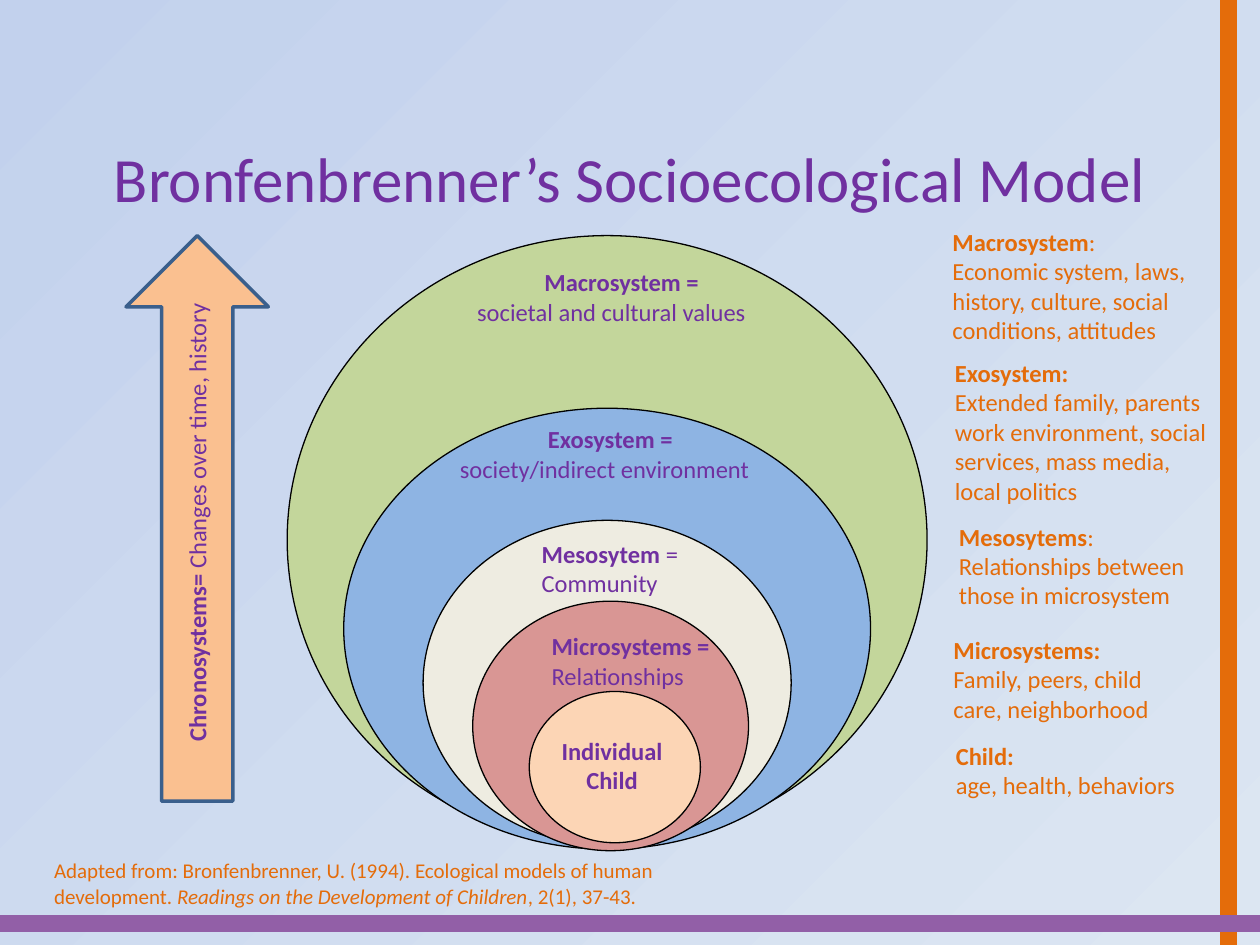
from pptx import Presentation
from pptx.dml.color import RGBColor
from pptx.enum.shapes import MSO_CONNECTOR, MSO_SHAPE
from pptx.enum.text import MSO_ANCHOR, PP_ALIGN
from pptx.oxml.ns import qn
from pptx.util import Cm, Pt

COLORS = {
    "purple": "7030A0", "orange": "E46C0A", "band": "925FA7", "black": "000000",
    "green": "C3D69B", "blue": "8EB4E3", "cream": "EEECE1", "rose": "D99694",
    "peach": "FCD5B5", "arrow": "FAC090", "arrow edge": "3A5F8C",
    "sky": "C2D1ED", "pale": "DCE6F2",
}
FONT = "Calibri"
WIDTH, HEIGHT = 25.4, 19.05
LEFT, CENTER = PP_ALIGN.LEFT, PP_ALIGN.CENTER

# All boxes are left, top, width, height in centimetres.
TITLE = ("Bronfenbrenner’s Socioecological Model", (1.8, 1.98, 21.79, 3.2))
BANDS = [  # start, end, colour
    ((24.77, HEIGHT), (24.77, 0), "orange"),
    ((0, 18.62), (WIDTH, 18.62), "band"),
]
SYSTEMS = [  # outermost first
    ("green", (5.79, 4.75, 12.9, 12.27)),
    ("blue", (6.93, 8.23, 10.62, 8.89)),
    ("cream", (8.53, 10.49, 7.42, 6.55)),
    ("rose", (9.53, 12.12, 5.56, 5.03)),
    ("peach", (10.67, 13.94, 3.45, 3.05)),
]
TIME_ARROW = (2.54, 4.75, 2.87, 11.4)

# Each paragraph is (alignment, bold part, regular part).
SYSTEM_LABELS = [
    ((9.37, 5.26, 6.32, 1.45),
     [(CENTER, "Macrosystem =", ""), (LEFT, "", "societal and cultural values")]),
    ((9.02, 8.43, 6.68, 1.45),
     [(CENTER, "Exosystem = ", ""), (LEFT, "", "society/indirect environment")]),
    ((10.67, 10.74, 4.65, 1.45),
     [(LEFT, "Mesosytem ", "="), (LEFT, "", "Community")]),
    ((10.87, 12.6, 4.04, 1.45), [(LEFT, "Microsystems = ", "Relationships")]),
    ((10.97, 14.71, 2.74, 1.45), [(CENTER, "Individual Child", "")]),
]
TIME_LABEL = ((-1.02, 9.78, 9.98, 0.86),
              [(LEFT, "Chronosystems= ", "Changes over time, history")])
EXAMPLES = [  # box, bold heading, regular rest of heading, examples
    ((18.95, 4.45, 5.23, 2.64), "Macrosystem", ":",
     "Economic system, laws, history, culture, social conditions, attitudes"),
    ((19, 7.09, 5.82, 3.25), "Exosystem:", "",
     "Extended family, parents work environment, social services, mass media, local politics"),
    ((19.08, 10.39, 5.13, 2.06), "Mesosytems", ":",
     "Relationships between those in microsystem"),
    ((18.97, 12.67, 5.13, 2.06), "Microsystems:", "",
     "Family, peers, child care, neighborhood"),
    ((19.02, 14.81, 5.51, 1.45), "Child:", "", "age, health, behaviors"),
]
CITATION_BOX = (0.84, 17.17, 16.33, 1.8)
CITATION = [  # text, italic
    ("Adapted from: Bronfenbrenner, U. (1994). Ecological models of human development.\u00a0", False),
    ("Readings on the Development of Children", True),
    (", 2(1), 37-43.", False),
]


def rgb(name):
    return RGBColor.from_string(COLORS[name])


def lengths(values):
    return [Cm(value) for value in values]


def set_font(paragraph, size, color):
    paragraph.font.name = FONT
    paragraph.font.size = Pt(size)
    paragraph.font.color.rgb = rgb(color)


def paint_background(slide):
    fill = slide.background.fill
    fill.gradient()
    fill.gradient_angle = 315
    for stop, color in zip(fill.gradient_stops, ("sky", "pale")):
        stop.color.rgb = rgb(color)


def add_band(slide, start, end, color):
    band = slide.shapes.add_connector(MSO_CONNECTOR.STRAIGHT, *lengths(start + end))
    band.line.color.rgb = rgb(color)
    band.line.width = Pt(9.5)
    properties = band._element.spPr
    properties.append(properties.makeelement(qn("a:effectLst"), {}))


def add_figure(slide, kind, box, fill, edge, weight):
    figure = slide.shapes.add_shape(kind, *lengths(box))
    figure.shadow.inherit = False
    figure.fill.solid()
    figure.fill.fore_color.rgb = rgb(fill)
    figure.line.color.rgb = rgb(edge)
    figure.line.width = Pt(weight)
    return figure


def add_label(slide, box, paragraphs, color):
    label = slide.shapes.add_textbox(*lengths(box))
    frame = label.text_frame
    frame.word_wrap = True
    for index, (alignment, bold_part, regular_part) in enumerate(paragraphs):
        paragraph = frame.add_paragraph() if index else frame.paragraphs[0]
        paragraph.alignment = alignment
        set_font(paragraph, 14, color)
        for text, bold in ((bold_part, True), (regular_part, False)):
            if text:
                run = paragraph.add_run()
                run.text = text
                run.font.bold = bold
    return label


def add_citation(slide):
    frame = slide.shapes.add_textbox(*lengths(CITATION_BOX)).text_frame
    frame.word_wrap = True
    paragraph = frame.paragraphs[0]
    set_font(paragraph, 12, "orange")
    for text, italic in CITATION:
        run = paragraph.add_run()
        run.text = text
        run.font.italic = italic


def add_title(slide):
    text, box = TITLE
    title = slide.shapes.title
    title.left, title.top, title.width, title.height = lengths(box)
    title.text_frame.text = text
    title.text_frame.vertical_anchor = MSO_ANCHOR.MIDDLE
    paragraph = title.text_frame.paragraphs[0]
    paragraph.alignment = CENTER
    set_font(paragraph, 36, "purple")


def main():
    deck = Presentation()
    deck.slide_width, deck.slide_height = Cm(WIDTH), Cm(HEIGHT)
    slide = deck.slides.add_slide(deck.slide_layouts[5])
    paint_background(slide)
    for band in BANDS:
        add_band(slide, *band)
    add_title(slide)
    add_citation(slide)
    for fill, box in SYSTEMS:
        add_figure(slide, MSO_SHAPE.OVAL, box, fill, "black", 0.75)
    arrow = add_figure(slide, MSO_SHAPE.DOWN_ARROW, TIME_ARROW, "arrow", "arrow edge", 2)
    arrow.rotation = 180
    for box, paragraphs in SYSTEM_LABELS:
        add_label(slide, box, paragraphs, "purple")
    add_label(slide, *TIME_LABEL, "purple").rotation = 270
    for box, heading, mark, examples in EXAMPLES:
        add_label(slide, box, [(LEFT, heading, mark), (LEFT, "", examples)], "orange")
    deck.save("out.pptx")


if __name__ == "__main__":
    main()
